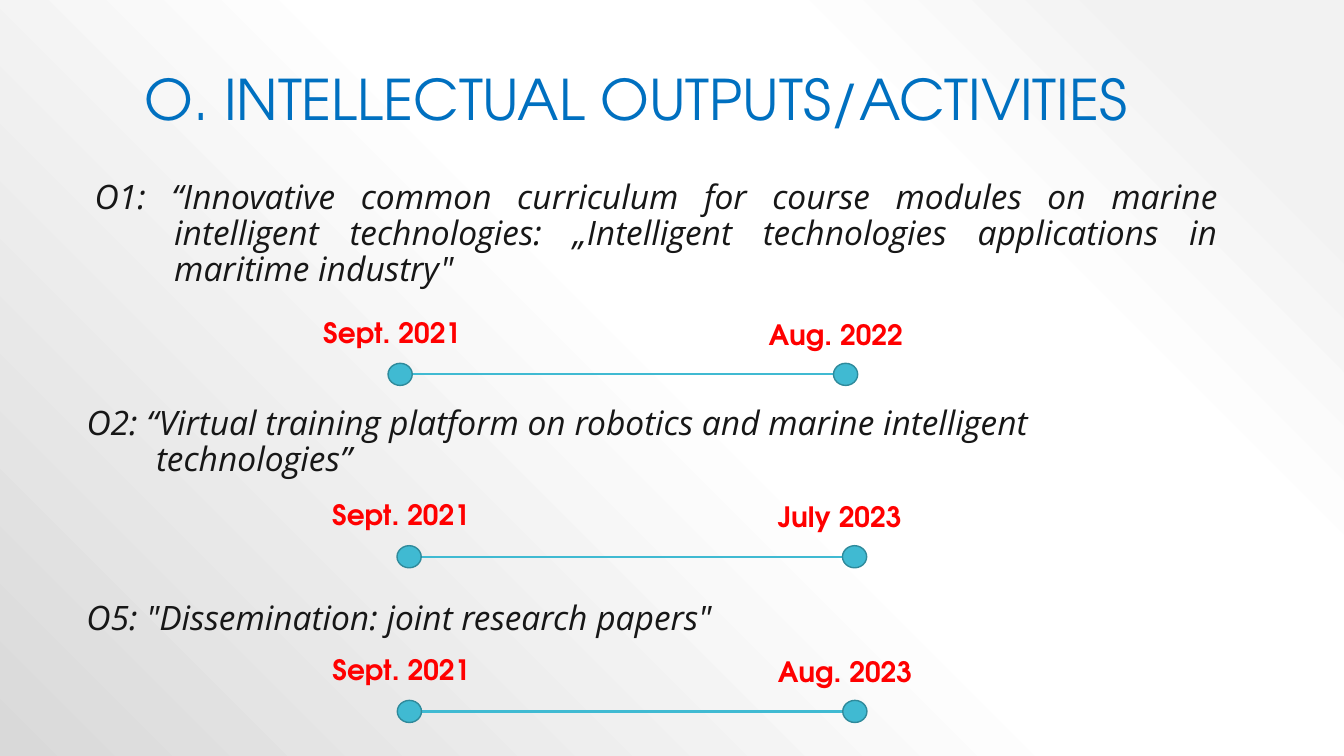
import pptx
import pptx.dml.color
import pptx.enum.shapes
import pptx.enum.text
import pptx.oxml
import pptx.oxml.ns
import pptx.util
from lxml import etree

Pt = pptx.util.Pt
RGBColor = pptx.dml.color.RGBColor
ALIGN = pptx.enum.text.PP_ALIGN
ANCHOR = pptx.enum.text.MSO_ANCHOR
SHAPE = pptx.enum.shapes.MSO_SHAPE
CONNECTOR = pptx.enum.shapes.MSO_CONNECTOR

BLUE = RGBColor(0x00, 0x70, 0xC0)
INK = RGBColor(0x17, 0x17, 0x17)
RED = RGBColor(0xFF, 0x00, 0x00)
TEAL = RGBColor(0x40, 0xBA, 0xD2)
DARK_TEAL = RGBColor(0x2F, 0x8A, 0x9B)
LIGHT_GREY = RGBColor(0xF2, 0xF2, 0xF2)
WHITE = RGBColor(0xFF, 0xFF, 0xFF)
GREY = RGBColor(0xD9, 0xD9, 0xD9)

HEADING_FONT = "TeX Gyre Adventor"
BODY_FONT = "Open Sans"
BACKGROUND_STOPS = [(10, LIGHT_GREY), (28, WHITE), (48, WHITE), (100, GREY)]

# Text, box (left, top, width, height), hanging indent, alignment
OUTPUTS = [
    ("O1: “Innovative common curriculum for course modules on marine intelligent "
     "technologies: „Intelligent technologies applications in maritime industry\"",
     (60.5, 125.3, 816.5, 94.3), 56.9, ALIGN.JUSTIFY),
    ("O2: “Virtual training platform on robotics and marine intelligent technologies”",
     (54.7, 286.6, 822.2, 65.5), 49.7, ALIGN.LEFT),
    ("O5: \"Dissemination: joint research papers\"",
     (54.7, 426.2, 813.6, 36), 0, ALIGN.LEFT),
]

# Start, end, box (left, top, width, height)
TIMELINES = [
    (" Sept. 2021", " Aug. 2022", (218.2, 221.8, 437, 53.5)),
    (" Sept. 2021", " July 2023", (224.6, 352.1, 437, 53.5)),
    (" Sept. 2021", " Aug. 2023", (224.8, 462.6, 437, 53.5)),
]


def write_text(shape, text, font, size, color, bold=False, italic=False,
               align=ALIGN.LEFT, hanging=0, spacing=None, anchor=ANCHOR.TOP):
    frame = shape.text_frame
    frame.word_wrap = True
    frame.auto_size = pptx.enum.text.MSO_AUTO_SIZE.NONE
    frame.vertical_anchor = anchor
    para = frame.paragraphs[0]
    para.alignment = align
    para.line_spacing = spacing
    if hanging:
        properties = para._p.get_or_add_pPr()
        properties.set("marL", str(Pt(hanging)))
        properties.set("indent", str(-Pt(hanging)))
    span = para.add_run()
    span.text = text
    span.font.name = font
    span.font.size = Pt(size)
    span.font.color.rgb = color
    span.font.bold = bold
    span.font.italic = italic


def fill_background(page):
    """Shade the page in rings around its top right corner."""
    fill = page.background.fill
    fill.gradient()
    gradient = page.background._cSld.find(".//" + pptx.oxml.ns.qn("a:gradFill"))
    for child in list(gradient):
        gradient.remove(child)
    stops = "".join(
        f'<a:gs pos="{position * 1000}"><a:srgbClr val="{color}"/></a:gs>'
        for position, color in BACKGROUND_STOPS)
    namespace = pptx.oxml.ns.nsdecls("a")
    gradient.append(pptx.oxml.parse_xml(f"<a:gsLst {namespace}>{stops}</a:gsLst>"))
    gradient.append(pptx.oxml.parse_xml(
        f'<a:path {namespace} path="circle">'
        '<a:fillToRect l="100000" b="100000"/></a:path>'))


def place_title(page, box):
    title = page.shapes.title
    title.left, title.top, title.width, title.height = map(Pt, box)
    write_text(title, "O. INTELLECTUAL OUTPUTS/ACTIVITIES", HEADING_FONT, 40, BLUE,
               spacing=0.9, anchor=ANCHOR.BOTTOM)


def place_output(page, text, box, hanging, align):
    textbox = page.shapes.add_textbox(*map(Pt, box))
    write_text(textbox, text, BODY_FONT, 24, INK, italic=True,
               align=align, hanging=hanging, spacing=0.9)


def place_timeline(page, start, end, box):
    """Group two dated dots, joined by a line, within the box."""
    left, top, width, height = box
    label_width, label_height = 118.8, 31.7
    dot_width, dot_height = 17.3, 15.8
    label_inset = 59
    shapes = page.shapes.add_group_shape().shapes

    end_left = left + width - label_width
    dot_top = top + height - dot_height
    middle = dot_top + dot_height / 2
    first_dot = left + label_inset
    last_dot = end_left + label_inset

    line = shapes.add_connector(CONNECTOR.STRAIGHT, Pt(first_dot + dot_width), Pt(middle),
                                Pt(last_dot + 3), Pt(middle))
    line.line.color.rgb = TEAL
    line.line.width = Pt(1.5)
    etree.SubElement(line._element.spPr, pptx.oxml.ns.qn("a:effectLst"))

    for text, label_left, label_top, dot_left in (
            (start, left, top, first_dot), (end, end_left, top + 1.4, last_dot)):
        label = shapes.add_textbox(Pt(label_left), Pt(label_top),
                                   Pt(label_width), Pt(label_height))
        write_text(label, text, HEADING_FONT, 20, RED, bold=True)
        dot = shapes.add_shape(SHAPE.FLOWCHART_CONNECTOR, Pt(dot_left), Pt(dot_top),
                               Pt(dot_width), Pt(dot_height))
        dot.shadow.inherit = False
        dot.fill.solid()
        dot.fill.fore_color.rgb = TEAL
        dot.line.color.rgb = DARK_TEAL
        dot.line.width = Pt(1)


def build_outputs_slide(deck):
    page = deck.slides.add_slide(deck.slide_layouts[5])
    fill_background(page)
    place_title(page, (96, -5.8, 768, 104.4))
    for output in OUTPUTS:
        place_output(page, *output)
    for timeline in TIMELINES:
        place_timeline(page, *timeline)


def main():
    deck = pptx.Presentation()
    deck.slide_width, deck.slide_height = Pt(960), Pt(540)
    build_outputs_slide(deck)
    deck.save("out.pptx")


if __name__ == "__main__":
    main()
